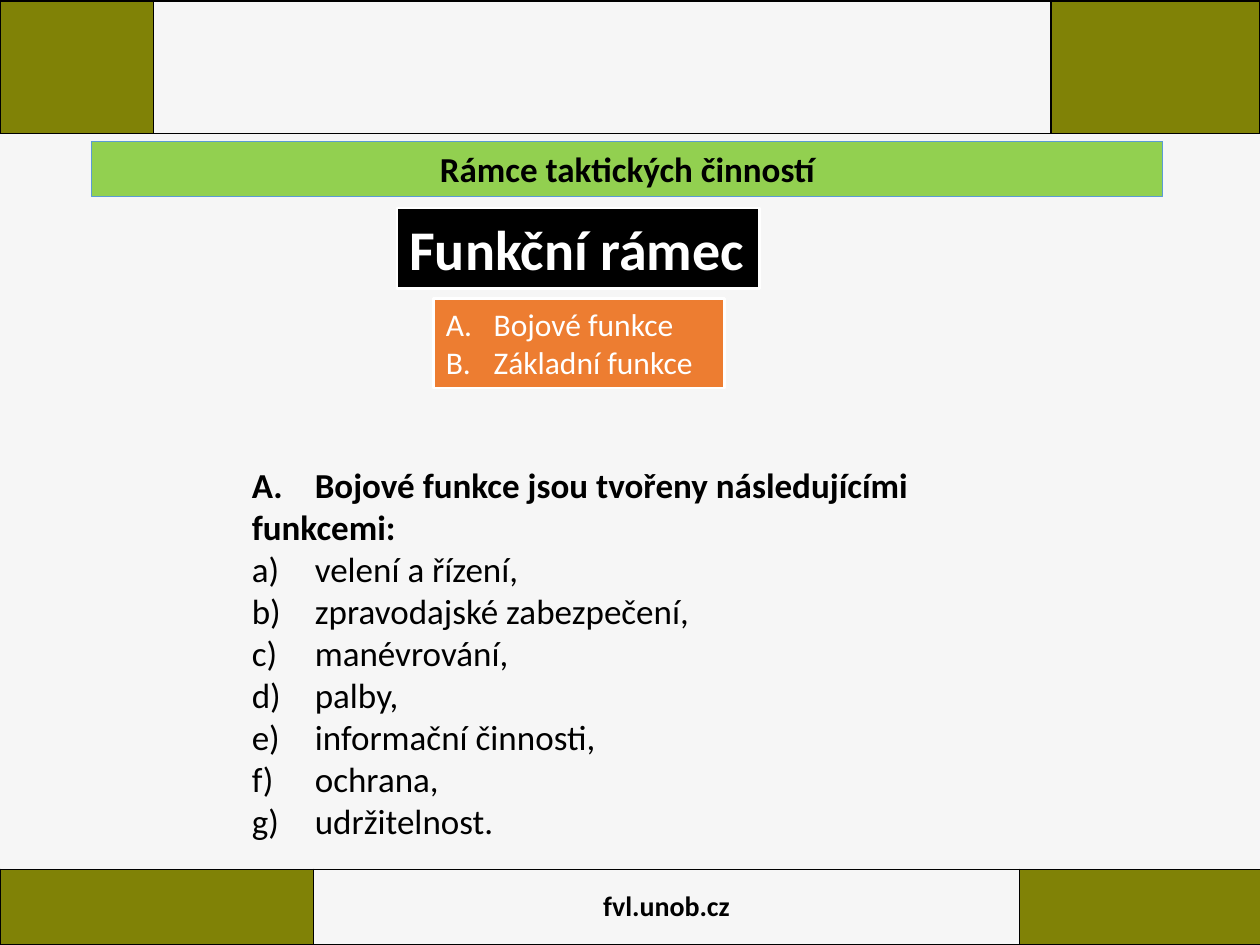
"""Build the slide on the functional framework of tactical activities."""
from lxml.etree import SubElement
from pptx import Presentation
from pptx.dml.color import RGBColor
from pptx.enum.shapes import MSO_SHAPE
from pptx.enum.text import MSO_ANCHOR, MSO_AUTO_SIZE, PP_ALIGN
from pptx.oxml import parse_xml
from pptx.oxml.ns import nsdecls, qn
from pptx.util import Inches, Pt

FONT, BLACK, WHITE, OLIVE = "Calibri", "000000", "FFFFFF", "808206"
BANDS = [
    ((0, 6.9), (2.49, 5.6, 1.92), 0.6, "fvl.unob.cz"),
    ((0, 0.01), (1.22, 7.12, 1.66), 1.05, ""),
]
TITLE = "Rámce taktických činností"
HEADING = "Funkční rámec"
PARTS = ["Bojové funkce", "Základní funkce"]
INTRO = "Bojové funkce jsou tvořeny následujícími funkcemi:"
FUNCTIONS = ["velení a řízení,", "zpravodajské zabezpečení,", "manévrování,",
             "palby,", "informační činnosti,", "ochrana,", "udržitelnost."]


def rgb(value):
    return RGBColor.from_string(value)


def add_text(p, text, size, color=BLACK, bold=False, align=PP_ALIGN.LEFT):
    p.alignment = align
    r = p.add_run()
    r.text = text
    r.font.name, r.font.size, r.font.bold = FONT, Pt(size), bold
    r.font.color.rgb = rgb(color)


def next_paragraph(tf, i):
    return tf.add_paragraph() if i else tf.paragraphs[0]


def add_border(cell, color, width):
    tcPr = cell._tc.get_or_add_tcPr()
    for i, side in enumerate(("lnL", "lnR", "lnT", "lnB")):
        tcPr.insert(i, parse_xml(
            f'<a:{side} {nsdecls("a")} w="{Pt(width)}"><a:solidFill>'
            f'<a:srgbClr val="{color}"/></a:solidFill></a:{side}>'))


def add_band(s, at, widths, height, text):
    left, top = at
    table = s.shapes.add_table(1, len(widths), Inches(left), Inches(top),
                               Inches(sum(widths)), Inches(height)).table
    for i, width in enumerate(widths):
        table.columns[i].width = Inches(width)
        cell = table.cell(0, i)
        if i == 1:
            cell.fill.background()
            cell.vertical_anchor = MSO_ANCHOR.MIDDLE
            if text:
                add_text(cell.text_frame.paragraphs[0], text, 16,
                         bold=True, align=PP_ALIGN.CENTER)
        else:
            cell.fill.solid()
            cell.fill.fore_color.rgb = rgb(OLIVE)
        add_border(cell, BLACK, 1)


def add_box(s, at, fill, line, width, grow=True):
    sp = s.shapes.add_shape(MSO_SHAPE.RECTANGLE, *map(Inches, at))
    sp.shadow.inherit = False
    sp.fill.solid()
    sp.fill.fore_color.rgb = rgb(fill)
    sp.line.color.rgb = rgb(line)
    sp.line.width = Pt(width)
    tf = sp.text_frame
    tf.vertical_anchor = MSO_ANCHOR.MIDDLE
    if grow:
        tf.vertical_anchor = MSO_ANCHOR.TOP
        tf.word_wrap = False
        tf.auto_size = MSO_AUTO_SIZE.SHAPE_TO_FIT_TEXT
    return tf


def add_functions(s):
    sp = s.shapes.add_textbox(*map(Inches, (1.9, 3.63, 6.38, 3.13)))
    tf = sp.text_frame
    tf.word_wrap = True
    tf.auto_size = MSO_AUTO_SIZE.SHAPE_TO_FIT_TEXT
    lines = [f"A.\t{INTRO}"]
    lines += [f"{letter})\t{name}" for letter, name in zip("abcdefg", FUNCTIONS)]
    for i, line in enumerate(lines):
        p = next_paragraph(tf, i)
        tabs = SubElement(p._p.get_or_add_pPr(), qn("a:tabLst"))
        SubElement(tabs, qn("a:tab"), pos=str(Inches(0.5)), algn="l")
        add_text(p, line, 20, bold=i == 0)


def add_parts(s):
    tf = add_box(s, (3.44, 2.37, 2.31, 0.71), "ED7D31", WHITE, 1.5)
    for i, part in enumerate(PARTS):
        p = next_paragraph(tf, i)
        pPr = p._p.get_or_add_pPr()
        pPr.set("marL", str(Inches(0.38)))
        pPr.set("indent", str(-Inches(0.38)))
        SubElement(pPr, qn("a:buFont"), typeface="+mj-lt")
        SubElement(pPr, qn("a:buAutoNum"), type="alphaUcPeriod")
        add_text(p, part, 18, WHITE)


def main():
    prs = Presentation()
    prs.slide_width, prs.slide_height = Inches(10), Inches(7.5)
    s = prs.slides.add_slide(prs.slide_layouts[6])
    s.background.fill.solid()
    s.background.fill.fore_color.rgb = rgb("F6F6F6")
    for band in BANDS:
        add_band(s, *band)
    tf = add_box(s, (0.73, 1.12, 8.5, 0.44), "92D050", "5B9BD5", 0.5, grow=False)
    add_text(tf.paragraphs[0], TITLE, 20, bold=True, align=PP_ALIGN.CENTER)
    tf = add_box(s, (3.15, 1.65, 2.88, 0.64), BLACK, WHITE, 1.5)
    add_text(tf.paragraphs[0], HEADING, 32, WHITE, bold=True)
    add_functions(s)
    add_parts(s)
    prs.save("out.pptx")


if __name__ == "__main__":
    main()
